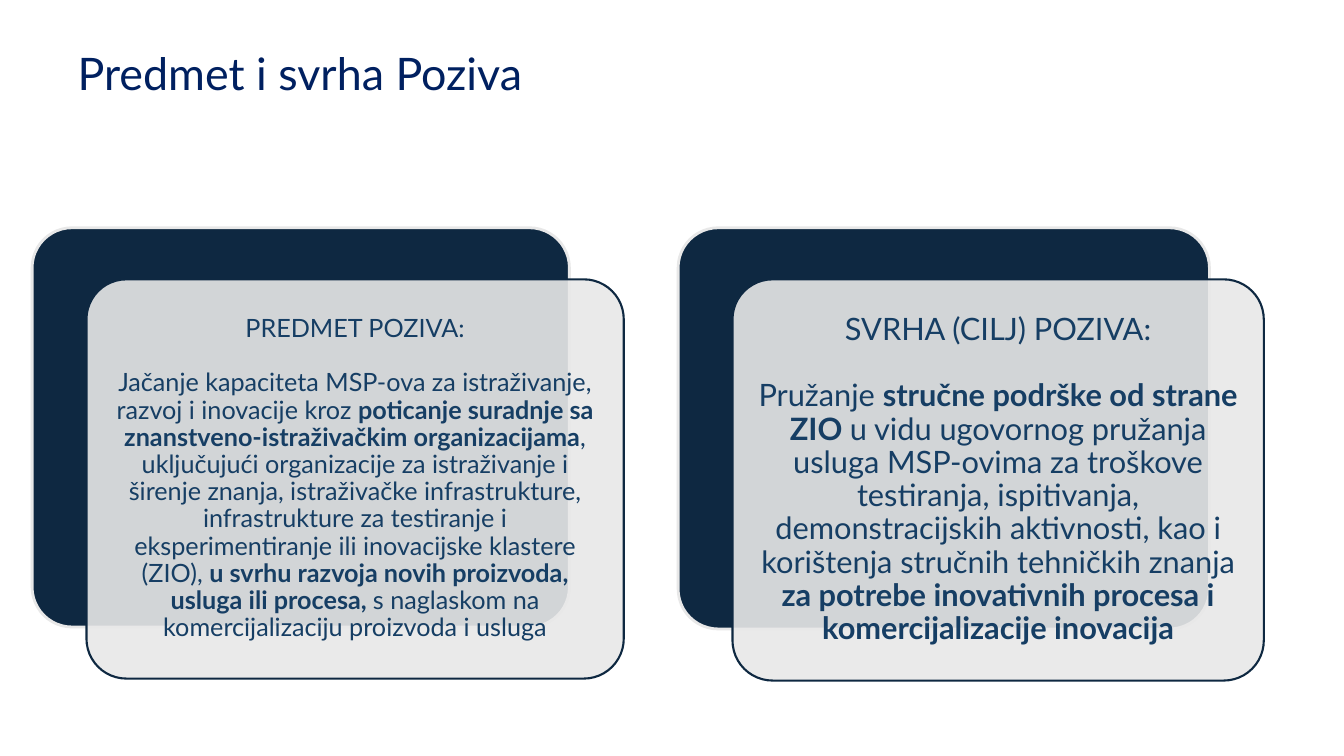
from lxml import etree
from pptx import Presentation, util as u
from pptx.dml.color import RGBColor
from pptx.enum import shapes, text
from pptx.oxml.ns import qn

COLOURS = {"title": "002060", "navy": "0E2841", "grey": "E8E8E8", "body": "163E64"}
FONT = "Lato"
LINE_SPACING = 0.9
CARD_TOP = 5.74
FRONT_SHIFT = (1.37, 1.3)


def colour(name):
    return RGBColor.from_string(COLOURS[name])


def write(paragraph, runs, size, ink, align, after=0):
    """Fill a paragraph with (wording, bold) runs in one format."""
    paragraph.alignment = align
    paragraph.line_spacing = LINE_SPACING
    paragraph.space_after = u.Pt(after)
    for wording, bold in runs:
        run = paragraph.add_run()
        run.text = wording
        run.font.name = FONT
        run.font.size = u.Pt(size)
        run.font.bold = bold
        run.font.color.rgb = colour(ink)


class CallSlide:
    def __init__(self, deck):
        self.slide = deck.slides.add_slide(deck.slide_layouts[5])

    def title(self, wording):
        heading = self.slide.shapes.title
        heading.left, heading.top = u.Cm(1.7), u.Cm(-0.33)
        heading.width, heading.height = u.Cm(23.75), u.Cm(4.5)
        frame = heading.text_frame
        frame.vertical_anchor = text.MSO_ANCHOR.MIDDLE
        write(frame.paragraphs[0], [(wording, False)], 32, "title", text.PP_ALIGN.LEFT)

    def panel(self, left, top, width, height, fill, line, weight, opacity=100):
        panel = self.slide.shapes.add_shape(
            shapes.MSO_SHAPE.ROUNDED_RECTANGLE,
            u.Cm(left), u.Cm(top), u.Cm(width), u.Cm(height))
        panel.adjustments[0] = 0.1
        panel.shadow.inherit = False
        panel.fill.solid()
        panel.fill.fore_color.rgb = colour(fill)
        panel.line.color.rgb = colour(line)
        panel.line.width = u.Pt(weight)
        if opacity < 100:
            tint = panel.fill._xPr.find(qn("a:solidFill"))[0]
            etree.SubElement(tint, qn("a:alpha")).set("val", str(opacity * 1000))
        return panel

    def card(self, left, width, height, heading, runs, size, inset):
        # Dark panel behind, translucent panel with the wording in front
        self.panel(left, CARD_TOP, width, height, "navy", "grey", 2)
        across, down = FRONT_SHIFT
        front = self.panel(left + across, CARD_TOP + down, width, height,
                           "grey", "navy", 1.5, opacity=90)
        frame = front.text_frame
        frame.word_wrap = True
        frame.vertical_anchor = text.MSO_ANCHOR.MIDDLE
        frame.margin_left = frame.margin_right = u.Cm(inset)
        frame.margin_top = frame.margin_bottom = u.Cm(inset)
        centre = text.PP_ALIGN.CENTER
        # The gap under the heading is one line high
        write(frame.paragraphs[0], [(heading, False)], size, "body", centre,
              after=round(size * 1.2 * LINE_SPACING, 1))
        write(frame.add_paragraph(), runs, size, "body", centre)


def main():
    deck = Presentation()
    deck.slide_width, deck.slide_height = u.Cm(33.87), u.Cm(19.05)
    page = CallSlide(deck)
    page.title("Predmet i svrha Poziva")

    # Subject of the call
    subject = [
        ("Jačanje kapaciteta MSP-ova za istraživanje, razvoj i inovacije kroz ", False),
        ("poticanje suradnje sa znanstveno-istraživačkim organizacijama", True),
        (", uključujući organizacije za istraživanje i širenje znanja, istraživačke "
         "infrastrukture, infrastrukture za testiranje i eksperimentiranje ili "
         "inovacijske klastere (ZIO), ", False),
        ("u svrhu razvoja novih proizvoda, usluga ili procesa, ", True),
        ("s naglaskom na komercijalizaciju proizvoda i usluga", False),
    ]
    page.card(0.81, 13.54, 10.06, "PREDMET POZIVA:", subject, size=18, inset=0.18)

    # Purpose of the call
    purpose = [
        ("Pružanje ", False),
        ("stručne podrške od strane ZIO ", True),
        ("u vidu ugovornog pružanja usluga MSP-ovima za troškove testiranja, "
         "ispitivanja, demonstracijskih aktivnosti, kao i korištenja stručnih "
         "tehničkih znanja ", False),
        ("za potrebe inovativnih procesa i komercijalizacije inovacija", True),
    ]
    page.card(17.09, 13.39, 10.11, "SVRHA (CILJ) POZIVA:", purpose, size=22, inset=0.23)

    deck.save("out.pptx")


if __name__ == "__main__":
    main()
